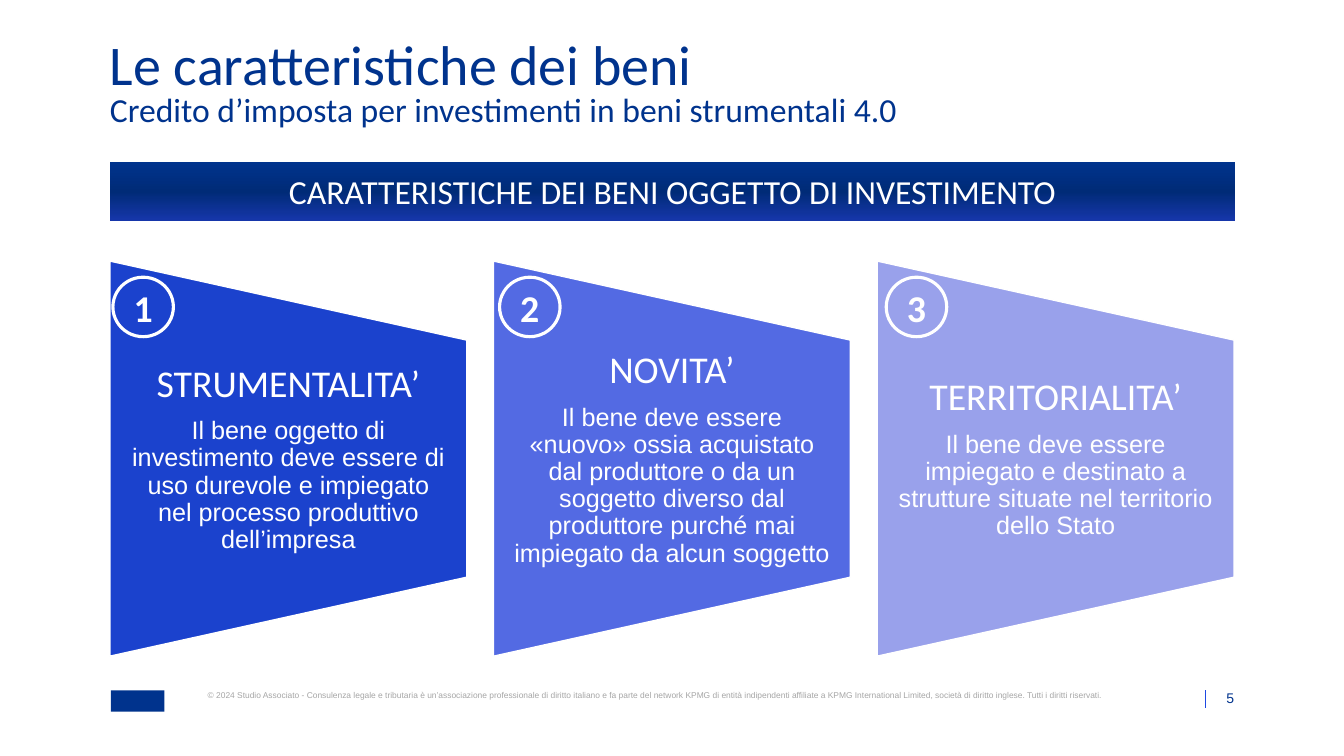
"""Build the slide on the three features of goods eligible for the tax credit."""
from copy import deepcopy

from pptx import Presentation
from pptx.dml.color import RGBColor
from pptx.enum.shapes import MSO_CONNECTOR, MSO_SHAPE
from pptx.enum.text import MSO_ANCHOR, MSO_AUTO_SIZE, PP_ALIGN
from pptx.oxml.ns import qn
from pptx.util import Inches, Pt

TITLE = "Le caratteristiche dei beni"
SUBTITLE = "Credito d’imposta per investimenti in beni strumentali 4.0"
BANNER = "CARATTERISTICHE DEI BENI OGGETTO DI INVESTIMENTO"
FEATURES = [
    ("STRUMENTALITA’", "Il bene oggetto di investimento deve essere di uso durevole e "
     "impiegato nel processo produttivo dell’impresa", "strong"),
    ("NOVITA’", "Il bene deve essere «nuovo» ossia acquistato dal produttore o da un "
     "soggetto diverso dal produttore purché mai impiegato da alcun soggetto", "medium"),
    ("TERRITORIALITA’", "Il bene deve essere impiegato e destinato a strutture situate "
     "nel territorio dello Stato", "light"),
]
COPYRIGHT = (
    "© 2024 Studio Associato - Consulenza legale e tributaria è un’associazione professionale "
    "di diritto italiano e fa parte del network KPMG di entità indipendenti affiliate a KPMG "
    "International Limited, società di diritto inglese. Tutti i diritti riservati."
)
PAGE_NUMBER = "5"

COLORS = {
    "navy": "00338D", "white": "FFFFFF", "grey": "A6A6A6", "rule": "1E49E2",
    "strong": "1B42CD", "medium": "536AE3", "light": "99A1EB",
}
BANNER_STOPS = [(0, "00338D"), (0.5, "002B77"), (1, "1636AA")]

LEFT, CONTENT_WIDTH = 1.09, 11.16
PANEL_WIDTH, PANEL_HEIGHT, PANEL_STEP = 3.54, 3.92, 3.805
PANEL_MIDDLE = 4.55
BADGE_LEFT, BADGE_STEP = 1.12, 3.835

CENTER, RIGHT = PP_ALIGN.CENTER, PP_ALIGN.RIGHT
TOP, MIDDLE, BOTTOM = MSO_ANCHOR.TOP, MSO_ANCHOR.MIDDLE, MSO_ANCHOR.BOTTOM


def color(name):
    return RGBColor.from_string(COLORS[name])


def text_format(size, name="Calibri", ink="white", bold=False, **paragraph):
    return {"font": {"size": Pt(size), "name": name, "bold": bold},
            "ink": ink, "paragraph": paragraph}


def write(shape, entries, anchor=TOP, side=0, vertical=0):
    frame = shape.text_frame
    settings = {
        "word_wrap": True, "auto_size": MSO_AUTO_SIZE.NONE, "vertical_anchor": anchor,
        "margin_left": Inches(side), "margin_right": Inches(side),
        "margin_top": Inches(vertical), "margin_bottom": Inches(vertical),
    }
    for key, value in settings.items():
        setattr(frame, key, value)
    for index, (text, style) in enumerate(entries):
        paragraph = frame.add_paragraph() if index else frame.paragraphs[0]
        for key, value in style["paragraph"].items():
            setattr(paragraph, key, value)
        run = paragraph.add_run()
        run.text = text
        for key, value in style["font"].items():
            setattr(run.font, key, value)
        run.font.color.rgb = color(style["ink"])


def add_text(slide, box, entries, **options):
    write(slide.shapes.add_textbox(*map(Inches, box)), entries, **options)


def add_shape(slide, kind, box, fill=None, line=None, width=1):
    shape = slide.shapes.add_shape(kind, *map(Inches, box))
    shape.shadow.inherit = False
    if fill:
        shape.fill.solid()
        shape.fill.fore_color.rgb = color(fill)
    else:
        shape.fill.background()
    if line:
        shape.line.color.rgb = color(line)
        shape.line.width = Pt(width)
    else:
        shape.line.fill.background()
    return shape


def add_heading(slide):
    title = slide.shapes.title
    box = (LEFT, 0.47, CONTENT_WIDTH, 0.58)
    for key, value in zip(("left", "top", "width", "height"), box):
        setattr(title, key, Inches(value))
    spacing = {"alignment": PP_ALIGN.LEFT, "line_spacing": 0.7}
    write(title, [(TITLE, text_format(40, ink="navy", **spacing))])
    add_text(slide, (LEFT, 0.99, CONTENT_WIDTH, 0.33),
             [(SUBTITLE, text_format(24, ink="navy", **spacing))])


def add_banner(slide):
    banner = add_shape(slide, MSO_SHAPE.RECTANGLE, (LEFT, 1.61, CONTENT_WIDTH, 0.58))
    banner.fill.gradient()
    banner.fill.gradient_angle = 270
    stop_list = banner.element.spPr.find(qn("a:gradFill")).find(qn("a:gsLst"))
    stop_list.append(deepcopy(stop_list[-1]))
    for stop, (position, hex_value) in zip(banner.fill.gradient_stops, BANNER_STOPS):
        stop.position = position
        stop.color.rgb = RGBColor.from_string(hex_value)
    write(banner, [(BANNER, text_format(24, alignment=CENTER))],
          anchor=MIDDLE, side=0.06, vertical=0.06)


def add_features(slide):
    spacing = {"alignment": CENTER, "line_spacing": 0.9}
    heading = text_format(27, space_after=Pt(9), **spacing)
    body = text_format(18, "Arial", **spacing)
    for index, (name, description, fill) in enumerate(FEATURES):
        left = LEFT + index * PANEL_STEP
        panel_box = (left - (PANEL_HEIGHT - PANEL_WIDTH) / 2, PANEL_MIDDLE - PANEL_WIDTH / 2,
                     PANEL_HEIGHT, PANEL_WIDTH)
        panel = add_shape(slide, MSO_SHAPE.FLOWCHART_MANUAL_OPERATION, panel_box, fill, "white")
        panel.rotation = 270
        add_text(slide, (left, 3.38, PANEL_WIDTH, 2.35),
                 [(name, heading), (description, body)], anchor=MIDDLE, side=0.19)
        badge = add_shape(slide, MSO_SHAPE.OVAL,
                          (BADGE_LEFT + index * BADGE_STEP, 2.75, 0.6, 0.59),
                          line="white", width=2.25)
        write(badge, [(str(index + 1), text_format(27, bold=True, alignment=CENTER))],
              anchor=MIDDLE, side=0.06, vertical=0.06)


def add_footer(slide):
    add_shape(slide, MSO_SHAPE.RECTANGLE, (1.1, 6.85, 0.53, 0.21), "navy")
    add_text(slide, (2.06, 6.85, 8.96, 0.1),
             [(COPYRIGHT, text_format(6, "Arial", "grey"))])
    rule = slide.shapes.add_connector(
        MSO_CONNECTOR.STRAIGHT, *map(Inches, (11.95, 6.85, 11.95, 7.02)))
    rule.line.color.rgb = color("rule")
    rule.line.width = Pt(0.5)
    properties = rule.element.spPr
    properties.append(properties.makeelement(qn("a:effectLst"), {}))
    add_text(slide, (11.97, 6.85, 0.27, 0.16),
             [(PAGE_NUMBER, text_format(10, "Arial", "navy", alignment=RIGHT))], anchor=BOTTOM)


def main():
    presentation = Presentation()
    presentation.slide_width = Inches(13.33)
    presentation.slide_height = Inches(7.5)
    slide = presentation.slides.add_slide(presentation.slide_layouts[5])
    add_heading(slide)
    add_banner(slide)
    add_features(slide)
    add_footer(slide)
    presentation.save("out.pptx")


if __name__ == "__main__":
    main()
